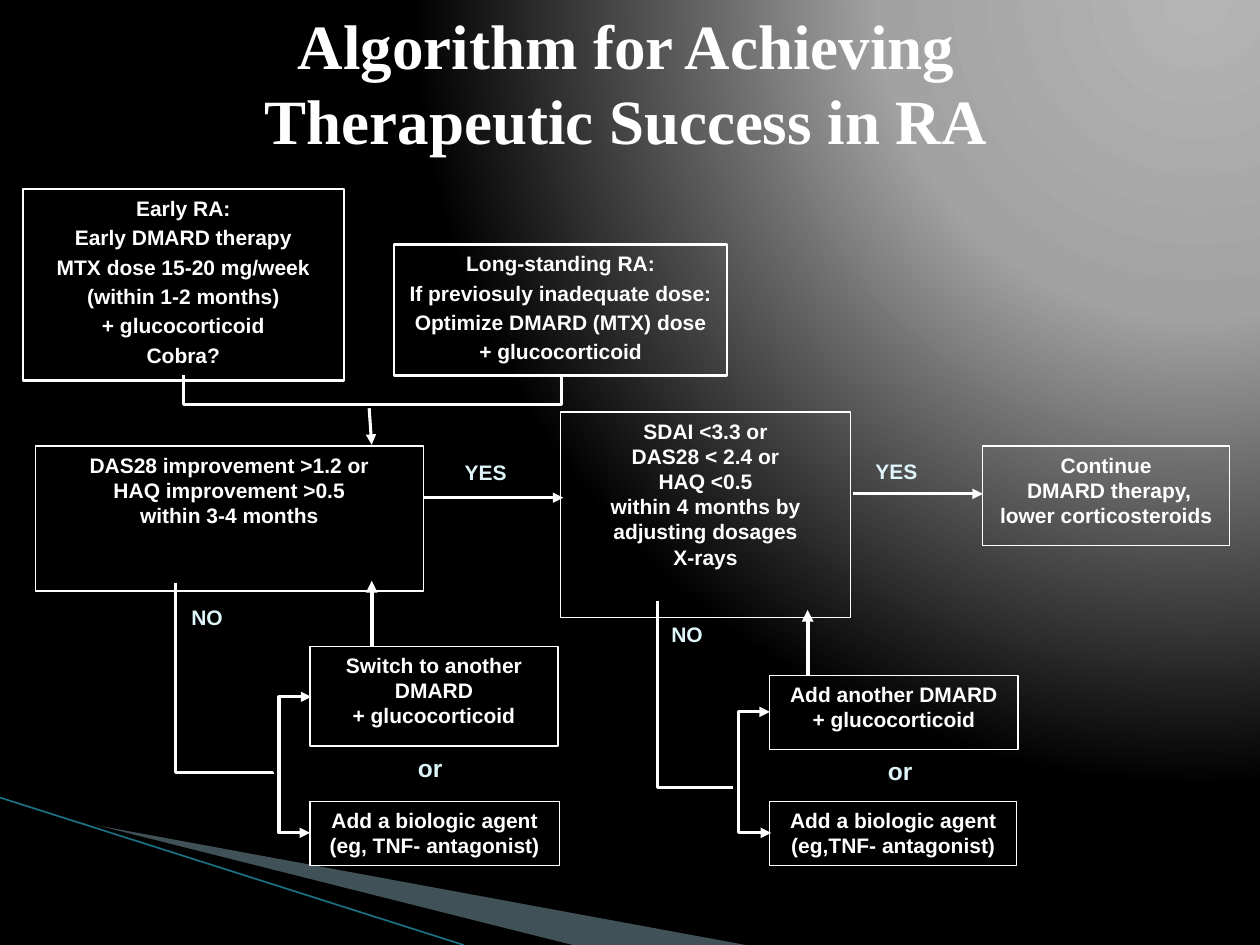
from lxml.etree import SubElement
from pptx import Presentation
from pptx.dml.color import RGBColor
from pptx.enum.shapes import MSO_CONNECTOR, MSO_SHAPE
from pptx.enum.text import MSO_ANCHOR, PP_ALIGN
from pptx.oxml.ns import qn
from pptx.util import Inches, Pt

WHITE = RGBColor(0xFF, 0xFF, 0xFF)
BLACK = RGBColor(0x00, 0x00, 0x00)
PALE = RGBColor(0xDE, 0xF5, 0xFA)
WEDGE = RGBColor(0xA0, 0xCB, 0xDC)
TEAL = RGBColor(0x1B, 0x70, 0x82)
GRADIENT = [(0, RGBColor(0xB4, 0xB4, 0xB4)), (40, RGBColor(0xA2, 0xA2, 0xA2)), (100, BLACK)]

deck = Presentation()
deck.slide_width, deck.slide_height = Inches(10), Inches(7.5)
page = deck.slides.add_slide(deck.slide_layouts[6])

# All positions below are in a grid of 100 columns by 75 rows.
COLUMN = deck.slide_width // 100
ROW = deck.slide_height // 75


def write(shape, lines, size, color, font="Arial", align=PP_ALIGN.CENTER, gap=0):
    frame = shape.text_frame
    frame.word_wrap = True
    frame.vertical_anchor = MSO_ANCHOR.TOP
    for number, line in enumerate(lines):
        para = frame.add_paragraph() if number else frame.paragraphs[0]
        para.text = line
        para.alignment = align
        if number and gap:
            para.space_before = Pt(gap)
        para.font.name, para.font.size, para.font.bold = font, Pt(size), True
        para.font.color.rgb = color


def add_line(kind, start, end, weight, color=WHITE, arrows=()):
    line = page.shapes.add_connector(
        kind, int(start[0] * COLUMN), int(start[1] * ROW), int(end[0] * COLUMN), int(end[1] * ROW))
    line.line.color.rgb = color
    line.line.width = Pt(weight)
    for end_name in arrows:
        SubElement(line.line._get_or_add_ln(), qn("a:" + end_name), type="triangle")
    SubElement(line._element.spPr, qn("a:effectLst"))
    return line


# Background: radial gradient from the upper right
page.background.fill.gradient()
gradient = page.element.find(".//" + qn("a:gradFill"))
for child in list(gradient):
    gradient.remove(child)
stops = SubElement(gradient, qn("a:gsLst"))
for share, color in GRADIENT:
    stop = SubElement(stops, qn("a:gs"), pos=str(share * 1000))
    SubElement(stop, qn("a:srgbClr"), val=str(color))
circle = SubElement(gradient, qn("a:path"), path="circle")
SubElement(circle, qn("a:fillToRect"), l="95000", t="-106000", r="5000", b="206000")

# Corner decoration
wedges = [
    (WEDGE, 40, [(5.5, 65.1), (59.2, 75), (45.4, 75)]),
    (BLACK, 100, [(5.3, 64.9), (45.4, 75), (37, 75)]),
]
for color, opacity, corners in wedges:
    points = [(int(x * COLUMN), int(y * ROW)) for x, y in corners]
    builder = page.shapes.build_freeform(*points[0])
    builder.add_line_segments(points[1:], close=True)
    wedge = builder.convert_to_shape()
    wedge.shadow.inherit = False
    wedge.fill.solid()
    wedge.fill.fore_color.rgb = color
    wedge.line.fill.background()
    if opacity < 100:
        tint = wedge._element.spPr.find(".//" + qn("a:srgbClr"))
        SubElement(tint, qn("a:alpha"), val=str(opacity * 1000))
add_line(MSO_CONNECTOR.STRAIGHT, (0, 63.3), (36.8, 75), 0.95, TEAL)

# Decision boxes: left, top, width, height, outline, paragraph gap, lines
boxes = [
    (1.8, 15, 25.5, 15.2, 1.25, 2.4,
     ["Early RA:", "Early DMARD therapy", "MTX dose 15-20 mg/week",
      "(within 1-2 months)", "+ glucocorticoid", "Cobra?"]),
    (31.3, 19.4, 26.4, 10.4, 1.25, 2.4,
     ["Long-standing RA:", "If previosuly inadequate dose:",
      "Optimize DMARD (MTX) dose", "+ glucocorticoid"]),
    (2.8, 35.4, 30.8, 11.5, 0.75, 0,
     ["DAS28 improvement >1.2 or", "HAQ improvement >0.5", "within 3-4 months"]),
    (24.6, 51.3, 19.7, 7.9, 0.75, 0, ["Switch to another DMARD", "+ glucocorticoid"]),
    (24.6, 63.6, 19.8, 5.1, 0.75, 0, ["Add a biologic agent (eg, TNF- antagonist)"]),
    (61.1, 53.6, 19.7, 5.9, 0.75, 0, ["Add another DMARD", "+ glucocorticoid"]),
    (61.1, 63.6, 19.6, 5.1, 0.75, 0, ["Add a biologic agent (eg,TNF- antagonist)"]),
    (44.5, 32.7, 23, 16.3, 0.75, 0,
     ["SDAI <3.3 or", "DAS28 < 2.4 or", "HAQ <0.5",
      "within 4 months by adjusting dosages", "X-rays"]),
    (78, 35.4, 19.6, 7.9, 0.75, 0, ["Continue", " DMARD therapy, lower corticosteroids"]),
]
for left, top, width, height, outline, gap, lines in boxes:
    box = page.shapes.add_shape(
        MSO_SHAPE.RECTANGLE, int(left * COLUMN), int(top * ROW), int(width * COLUMN), int(height * ROW))
    box.shadow.inherit = False
    box.fill.background()
    box.line.color.rgb = WHITE
    box.line.width = Pt(outline)
    write(box, lines, 12, WHITE, gap=gap)

# Elbows: left, top, width, height before rotation, rotation, flipped, bend share, arrows
BOTH = ("headEnd", "tailEnd")
elbows = [
    (29.5, 14.8, 0.1, 30, 270, True, 24, ()),
    (10.2, 50, 15.2, 7.7, 270, True, 0.99, ()),
    (24.6, 55.3, 0.1, 10.8, 180, True, -25, BOTH),
    (47.8, 52.1, 14.8, 6, 270, True, 1, ()),
    (61.1, 56.5, 0.1, 9.6, 180, False, 26, BOTH),
]
for left, top, width, height, turn, flipped, bend, arrows in elbows:
    elbow = add_line(MSO_CONNECTOR.ELBOW, (left, top), (left + width, top + height), 1.75, arrows=arrows)
    frame = elbow._element.spPr.find(qn("a:xfrm"))
    frame.set("rot", str(turn * 60000))
    if flipped:
        frame.set("flipH", "1")
    guides = elbow._element.spPr.find(qn("a:prstGeom")).get_or_add_avLst()
    SubElement(guides, qn("a:gd"), name="adj1", fmla=f"val {round(bend * 100000)}")

# Straight arrows
arrows = [
    ((29.3, 32.4), (29.5, 35.3), 1.75),
    ((29.5, 51.3), (29.5, 46.1), 2.25),
    ((64.1, 53.6), (64.1, 48.4), 2.25),
    ((33.6, 39.5), (44.7, 39.5), 1.75),
    ((67.7, 39.2), (78, 39.2), 1.75),
]
for start, end, weight in arrows:
    add_line(MSO_CONNECTOR.STRAIGHT, start, end, weight, arrows=["tailEnd"])

# Branch labels: text, left, top, width, height, size, alignment
labels = [
    ("or", 31.8, 59.3, 4.7, 3.3, 14, PP_ALIGN.CENTER),
    ("or", 69.1, 59.5, 4.7, 3.3, 14, PP_ALIGN.CENTER),
    ("NO", 14.2, 47.5, 4.5, 3, 12, PP_ALIGN.LEFT),
    ("NO", 52.3, 48.8, 4.5, 3, 12, PP_ALIGN.LEFT),
    ("YES", 35.9, 36, 5.3, 3, 12, PP_ALIGN.LEFT),
    ("YES", 68.5, 35.9, 5.3, 3, 12, PP_ALIGN.LEFT),
]
for text, left, top, width, height, size, align in labels:
    label = page.shapes.add_textbox(int(left * COLUMN), int(top * ROW), int(width * COLUMN), int(height * ROW))
    write(label, [text], size, PALE, align=align)
    if align == PP_ALIGN.LEFT:
        label.text_frame.margin_right = 0

title = page.shapes.add_textbox(int(10.6 * COLUMN), 0, int(78.2 * COLUMN), 13 * ROW)
write(title, ["Algorithm for Achieving Therapeutic Success in RA"], 36, WHITE, font="Times New Roman")

deck.save("out.pptx")
